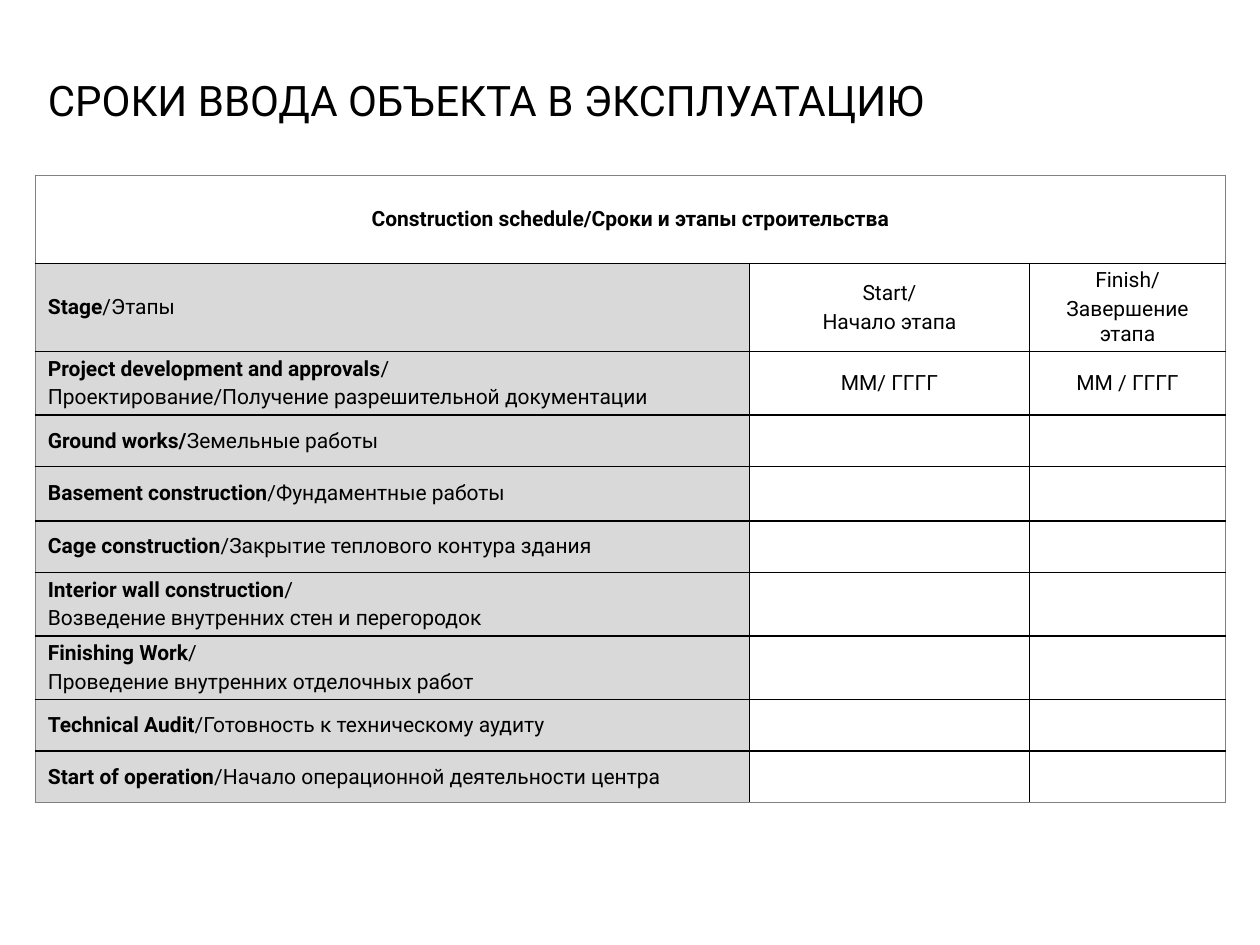
import pptx
import pptx.util
import pptx.dml.color
import pptx.enum.text
import pptx.oxml
import pptx.oxml.ns

Inches, Pt = pptx.util.Inches, pptx.util.Pt
RGBColor = pptx.dml.color.RGBColor
PP_ALIGN = pptx.enum.text.PP_ALIGN
MIDDLE = pptx.enum.text.MSO_ANCHOR.MIDDLE

BLACK = RGBColor(0x00, 0x00, 0x00)
GREY = RGBColor(0x80, 0x80, 0x80)
STAGE_FILL = RGBColor(0xD9, 0xD9, 0xD9)
WHITE = RGBColor(0xFF, 0xFF, 0xFF)

FONT = "Roboto"
LEFT = 0.28
COLUMNS = [5.67, 2.22, 1.56]
ROWS = [0.7, 0.69, 0.5, 0.41, 0.43, 0.41, 0.5, 0.5, 0.41, 0.41]

TITLE = "СРОКИ ВВОДА ОБЪЕКТА В ЭКСПЛУАТАЦИЮ"
HEADING = "Construction schedule/Сроки и этапы строительства"

# Each stage: bold English part, regular Russian part (a line break starts a paragraph)
STAGES = [
    ("Stage", "/Этапы"),
    ("Project development and approvals",
     "/\nПроектирование/Получение разрешительной документации"),
    ("Ground works/", "Земельные работы"),
    ("Basement construction", "/Фундаментные работы"),
    ("Cage construction", "/Закрытие теплового контура здания"),
    ("Interior wall construction", "/\nВозведение внутренних стен и перегородок"),
    ("Finishing Work", "/\nПроведение внутренних отделочных работ"),
    ("Technical Audit", "/Готовность к техническому аудиту"),
    ("Start of operation", "/Начало операционной деятельности центра"),
]
DATES = [
    ("Start/\nНачало этапа", "Finish/\nЗавершение этапа"),
    ("ММ/ ГГГГ", "ММ / ГГГГ"),
]


def apply_format(target, values):
    for name, value in values.items():
        setattr(target, name, value)


def add_run(paragraph, text, size, bold=False):
    run = paragraph.add_run()
    run.text = text
    apply_format(run.font, {"name": FONT, "size": Pt(size), "bold": bold})
    run.font.color.rgb = BLACK


def write_cell(cell, bold_part, regular_part, align):
    """Write a bold lead followed by regular text, one paragraph per line."""
    frame = cell.text_frame
    for number, line in enumerate(regular_part.split("\n")):
        paragraph = frame.add_paragraph() if number else frame.paragraphs[0]
        paragraph.alignment = align
        if number:
            paragraph.space_before = Pt(2.4)
        elif bold_part:
            add_run(paragraph, bold_part, 12, bold=True)
        if line:
            add_run(paragraph, line, 12)


def set_border(cell, side, color, width):
    cell._tc.get_or_add_tcPr().append(pptx.oxml.parse_xml(
        f'<a:ln{side} {pptx.oxml.ns.nsdecls("a")} w="{Pt(width)}">'
        f'<a:solidFill><a:srgbClr val="{color}"/></a:solidFill></a:ln{side}>'))


def style_cell(cell, row, column):
    """Grey outer frame, black inner rules, shaded stage column."""
    outer = {
        "L": column == 0,
        "R": column + cell.span_width == len(COLUMNS),
        "T": row == 0,
        "B": row == len(ROWS) - 1,
    }
    for side, is_outer in outer.items():
        set_border(cell, side, *((GREY, 0.75) if is_outer else (BLACK, 1)))
    cell.fill.solid()
    cell.fill.fore_color.rgb = STAGE_FILL if row and column == 0 else WHITE
    apply_format(cell, {
        "vertical_anchor": MIDDLE,
        "margin_left": Inches(0.1), "margin_right": Inches(0.1),
        "margin_top": Inches(0.04), "margin_bottom": Inches(0.04),
    })


def add_title(slide):
    title = slide.shapes.title
    apply_format(title, {
        "left": Inches(LEFT), "top": Inches(0.52),
        "width": Inches(7.72), "height": Inches(0.54),
    })
    apply_format(title.text_frame, {"word_wrap": True, "vertical_anchor": MIDDLE})
    heading = title.text_frame.paragraphs[0]
    heading.alignment = PP_ALIGN.LEFT
    add_run(heading, TITLE, 24)


def add_schedule(slide):
    schedule = slide.shapes.add_table(
        len(ROWS), len(COLUMNS), Inches(LEFT), Inches(1.39),
        Inches(sum(COLUMNS)), Inches(sum(ROWS))).table
    apply_format(schedule, {"first_row": False, "horz_banding": False})
    for column, width in zip(schedule.columns, COLUMNS):
        column.width = Inches(width)
    for row, height in zip(schedule.rows, ROWS):
        row.height = Inches(height)

    # Heading across all columns
    schedule.cell(0, 0).merge(schedule.cell(0, len(COLUMNS) - 1))
    write_cell(schedule.cell(0, 0), HEADING, "", PP_ALIGN.CENTER)

    # Stages and their dates
    for row, (english, russian) in enumerate(STAGES, start=1):
        write_cell(schedule.cell(row, 0), english, russian, PP_ALIGN.LEFT)
    for row, dates in enumerate(DATES, start=1):
        for column, date in enumerate(dates, start=1):
            write_cell(schedule.cell(row, column), "", date, PP_ALIGN.CENTER)

    for row in range(len(ROWS)):
        for column in range(len(COLUMNS)):
            cell = schedule.cell(row, column)
            if not cell.is_spanned:
                style_cell(cell, row, column)


def main():
    deck = pptx.Presentation()
    apply_format(deck, {"slide_width": Inches(10), "slide_height": Inches(7.5)})
    slide = deck.slides.add_slide(deck.slide_layouts.get_by_name("Title Only"))
    add_title(slide)
    add_schedule(slide)
    deck.save("out.pptx")


if __name__ == "__main__":
    main()
